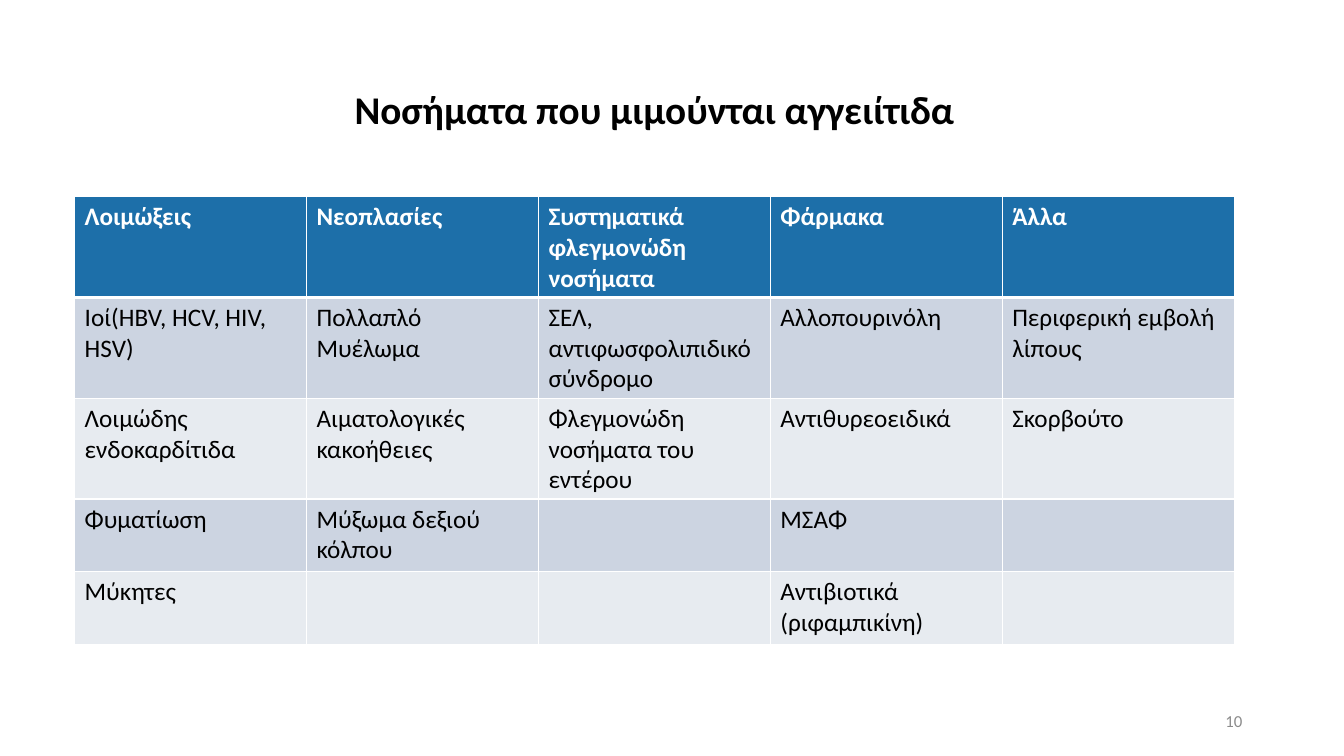
from dataclasses import dataclass

from lxml import etree
from pptx import Presentation
from pptx.dml.color import RGBColor
from pptx.enum.text import MSO_ANCHOR, PP_ALIGN
from pptx.oxml.ns import qn
from pptx.util import Inches, Pt

CENTER, RIGHT = PP_ALIGN.CENTER, PP_ALIGN.RIGHT
MIDDLE = MSO_ANCHOR.MIDDLE

WHITE = RGBColor(0xFF, 0xFF, 0xFF)
BLACK = RGBColor(0x00, 0x00, 0x00)
GRAY = RGBColor(0x8B, 0x8B, 0x8B)
HEADER_BLUE = RGBColor(0x1D, 0x6F, 0xA9)
BAND_DARK = RGBColor(0xCC, 0xD4, 0xE1)
BAND_LIGHT = RGBColor(0xE7, 0xEB, 0xF0)

FONT = "Calibri"
THIN, THICK = 0.96, 3
COLUMN_WIDTH = 2.3


@dataclass
class Label:
    text: str
    left: float
    top: float
    width: float
    height: float
    align: PP_ALIGN
    line_spacing: float
    format: dict


@dataclass
class Row:
    height: float
    texts: list[str]


LABELS = [
    Label("Νοσήματα που μιμούνται αγγειίτιδα", 0.74, 0.38, 11.5, 1.45, CENTER, 0.9,
          {"size": Pt(28), "bold": True, "color": BLACK}),
    Label("10", 9.42, 6.95, 3, 0.4, RIGHT, 1.0,
          {"size": Pt(12), "bold": False, "color": GRAY}),
]

ROWS = [
    Row(1, ["Λοιμώξεις", "Νεοπλασίες", "Συστηματικά φλεγμονώδη νοσήματα",
            "Φάρμακα", "Άλλα"]),
    Row(1, ["Ιοί(HBV, HCV, HIV, HSV)", "Πολλαπλό Μυέλωμα",
            "ΣΕΛ, αντιφωσφολιπιδικό σύνδρομο", "Αλλοπουρινόλη",
            "Περιφερική εμβολή λίπους"]),
    Row(1, ["Λοιμώδης ενδοκαρδίτιδα", "Αιματολογικές κακοήθειες",
            "Φλεγμονώδη νοσήματα του εντέρου", "Αντιθυρεοειδικά", "Σκορβούτο"]),
    Row(0.72, ["Φυματίωση", "Μύξωμα δεξιού κόλπου", "", "ΜΣΑΦ", ""]),
    Row(0.72, ["Μύκητες", "", "", "Αντιβιοτικά (ριφαμπικίνη)", ""]),
]

HEADER_FORMAT = {"size": Pt(18), "bold": True, "color": WHITE}
BODY_FORMAT = {"size": Pt(18), "bold": False, "color": BLACK}


def style_font(font, values: dict) -> None:
    font.name = FONT
    for name, value in values.items():
        if name == "color":
            font.color.rgb = value
        else:
            setattr(font, name, value)


def add_label(page, label: Label) -> None:
    box = page.shapes.add_textbox(Inches(label.left), Inches(label.top),
                                  Inches(label.width), Inches(label.height))
    frame = box.text_frame
    frame.word_wrap = True
    frame.vertical_anchor = MIDDLE
    para = frame.paragraphs[0]
    para.alignment = label.align
    para.line_spacing = label.line_spacing
    span = para.add_run()
    span.text = label.text
    style_font(span.font, label.format)


def set_borders(cell, top: float, bottom: float) -> None:
    properties = cell._tc.get_or_add_tcPr()
    sides = {"a:lnL": THIN, "a:lnR": THIN, "a:lnT": top, "a:lnB": bottom}
    for tag, width in sides.items():
        line = etree.SubElement(properties, qn(tag), w=str(Pt(width)))
        fill = etree.SubElement(line, qn("a:solidFill"))
        etree.SubElement(fill, qn("a:srgbClr"), val=str(WHITE))


def add_disease_table(page, left: float, top: float) -> None:
    column_count = len(ROWS[0].texts)
    frame = page.shapes.add_table(
        len(ROWS), column_count, Inches(left), Inches(top),
        Inches(column_count * COLUMN_WIDTH), Inches(sum(row.height for row in ROWS)))
    table = frame.table
    for column in table.columns:
        column.width = Inches(COLUMN_WIDTH)

    for r, row in enumerate(ROWS):
        table.rows[r].height = Inches(row.height)
        is_header = r == 0
        band = BAND_DARK if r % 2 else BAND_LIGHT
        for c, text in enumerate(row.texts):
            cell = table.cell(r, c)
            # Borders come before the fill in the cell properties
            set_borders(cell, THICK if r == 1 else THIN, THICK if is_header else THIN)
            cell.fill.solid()
            cell.fill.fore_color.rgb = HEADER_BLUE if is_header else band
            if text:
                span = cell.text_frame.paragraphs[0].add_run()
                span.text = text
                style_font(span.font, HEADER_FORMAT if is_header else BODY_FORMAT)


def main() -> None:
    deck = Presentation()
    deck.slide_width, deck.slide_height = Inches(13.33), Inches(7.5)
    page = deck.slides.add_slide(deck.slide_layouts[6])

    # Title and page number
    for label in LABELS:
        add_label(page, label)

    # Table of mimicking diseases
    add_disease_table(page, 0.74, 1.95)

    deck.save("out.pptx")


if __name__ == "__main__":
    main()
